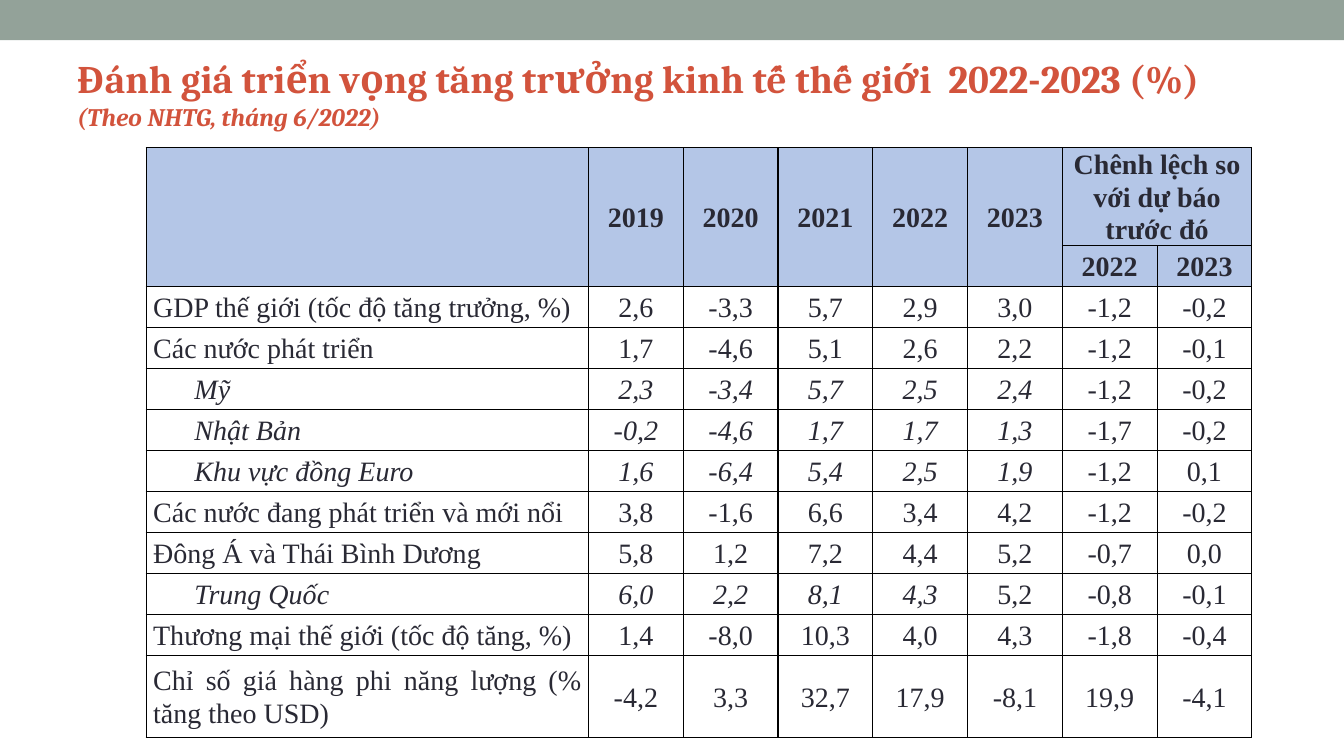
import dataclasses

import lxml.etree
import pptx
import pptx.dml.color
import pptx.enum.shapes
import pptx.enum.text
import pptx.oxml.ns
import pptx.util

Pt = pptx.util.Pt
qn = pptx.oxml.ns.qn
Align = pptx.enum.text.PP_ALIGN
Middle = pptx.enum.text.MSO_ANCHOR.MIDDLE


def color(value):
    return pptx.dml.color.RGBColor.from_string(value)


@dataclasses.dataclass(frozen=True)
class Theme:
    bar: str = "93A299"
    title: str = "D2533C"
    text: str = "292934"
    header: str = "B4C6E7"
    border: str = "000000"
    title_font: str = "Cambria"
    table_font: str = "Times New Roman"
    title_size: float = 27.9
    subtitle_size: float = 18
    table_size: float = 20
    border_width: float = 1
    indent: float = 29.5


THEME = Theme()
TITLE = "Đánh giá triển vọng tăng trưởng kinh tế thế giới  2022-2023 (%)"
SUBTITLE = "(Theo NHTG, tháng 6/2022)"
YEARS = ["2019", "2020", "2021", "2022", "2023"]
REVISION = "Chênh lệch so với dự báo trước đó"
REVISION_YEARS = ["2022", "2023"]
FORECASTS = [
    ("GDP thế giới (tốc độ tăng trưởng, %)", "2,6 -3,3 5,7 2,9 3,0 -1,2 -0,2", 0),
    ("Các nước phát triển", "1,7 -4,6 5,1 2,6 2,2 -1,2 -0,1", 0),
    ("Mỹ", "2,3 -3,4 5,7 2,5 2,4 -1,2 -0,2", 6),
    ("Nhật Bản", "-0,2 -4,6 1,7 1,7 1,3 -1,7 -0,2", 6),
    ("Khu vực đồng Euro", "1,6 -6,4 5,4 2,5 1,9 -1,2 0,1", 6),
    ("Các nước đang phát triển và mới nổi", "3,8 -1,6 6,6 3,4 4,2 -1,2 -0,2", 0),
    ("Đông Á và Thái Bình Dương", "5,8 1,2 7,2 4,4 5,2 -0,7 0,0", 0),
    ("Trung Quốc", "6,0 2,2 8,1 4,3 5,2 -0,8 -0,1", 5),
    ("Thương mại thế giới (tốc độ tăng, %)", "1,4 -8,0 10,3 4,0 4,3 -1,8 -0,4", 0),
    ("Chỉ số giá hàng phi năng lượng (% tăng theo USD)",
     "-4,2 3,3 32,7 17,9 -8,1 19,9 -4,1", 0),
]


def add_top_bar(slide, left, top, width, height):
    bar = slide.shapes.add_shape(
        pptx.enum.shapes.MSO_SHAPE.RECTANGLE, Pt(left), Pt(top), Pt(width), Pt(height))
    bar.shadow.inherit = False
    bar.fill.solid()
    bar.fill.fore_color.rgb = color(THEME.bar)
    bar.line.fill.background()


def add_title(slide, left, top, width, height):
    title = slide.shapes.title
    title.left, title.top, title.width, title.height = map(Pt, (left, top, width, height))
    frame = title.text_frame
    frame.text = f"{TITLE}\v{SUBTITLE}"
    frame.word_wrap = True
    frame.auto_size = pptx.enum.text.MSO_AUTO_SIZE.NONE
    frame.vertical_anchor = Middle
    paragraph = frame.paragraphs[0]
    paragraph.alignment = Align.LEFT
    heading, source = paragraph.runs
    for run, size in ((heading, THEME.title_size), (source, THEME.subtitle_size)):
        run.font.name = THEME.title_font
        run.font.size = Pt(size)
        run.font.bold = True
        run.font.color.rgb = color(THEME.title)
    source.font.italic = True


def set_borders(cell):
    properties = cell._tc.get_or_add_tcPr()
    for position, side in enumerate(("a:lnL", "a:lnR", "a:lnT", "a:lnB")):
        line = lxml.etree.Element(qn(side), w=str(Pt(THEME.border_width)))
        fill = lxml.etree.SubElement(line, qn("a:solidFill"))
        lxml.etree.SubElement(fill, qn("a:srgbClr"), val=THEME.border)
        properties.insert(position, line)


def format_cell(cell, is_header):
    cell.margin_left = cell.margin_right = Pt(5)
    cell.margin_top = cell.margin_bottom = Pt(0)
    cell.vertical_anchor = Middle
    if is_header:
        cell.fill.solid()
        cell.fill.fore_color.rgb = color(THEME.header)
    else:
        cell.fill.background()
    set_borders(cell)


def write_cell(cell, text, alignment=Align.CENTER, bold=False, italic=False):
    cell.text_frame.text = text
    paragraph = cell.text_frame.paragraphs[0]
    paragraph.alignment = alignment
    paragraph.line_spacing = 1.05
    font = paragraph.runs[0].font
    font.name = THEME.table_font
    font.size = Pt(THEME.table_size)
    font.bold = bold
    font.italic = italic
    font.color.rgb = color(THEME.text)
    return paragraph


def write_header(table):
    for column in range(len(YEARS) + 1):
        table.cell(0, column).merge(table.cell(1, column))
    first_revision = len(YEARS) + 1
    table.cell(0, first_revision).merge(table.cell(0, first_revision + 1))
    for column, year in enumerate(YEARS, 1):
        write_cell(table.cell(0, column), year, bold=True)
    write_cell(table.cell(0, first_revision), REVISION, bold=True)
    for column, year in enumerate(REVISION_YEARS, first_revision):
        write_cell(table.cell(1, column), year, bold=True)


def add_forecast_table(slide, left, top, width, height):
    row_count = len(FORECASTS) + 2
    column_count = len(YEARS) + len(REVISION_YEARS) + 1
    table = slide.shapes.add_table(
        row_count, column_count, Pt(left), Pt(top), Pt(width), Pt(height)).table
    table.first_row = table.horz_banding = False

    label_width, header_height = 0.4 * width, 70
    row_height = (height - header_height) / row_count
    for index, column in enumerate(table.columns):
        column.width = Pt(label_width if index == 0
                          else (width - label_width) / (column_count - 1))
    for row in table.rows:
        row.height = Pt(row_height)
    table.rows[0].height = Pt(header_height)
    table.rows[row_count - 1].height = Pt(2 * row_height)

    for row in range(row_count):
        for column in range(column_count):
            format_cell(table.cell(row, column), row < 2)
    write_header(table)
    for row, (label, values, italic_cells) in enumerate(FORECASTS, 2):
        paragraph = write_cell(
            table.cell(row, 0), label, Align.JUSTIFY, italic=italic_cells > 0)
        if italic_cells:
            paragraph._p.get_or_add_pPr().set("indent", str(Pt(THEME.indent)))
        for column, value in enumerate(values.split(), 1):
            write_cell(table.cell(row, column), value, italic=column < italic_cells)


def main():
    presentation = pptx.Presentation()
    presentation.slide_width, presentation.slide_height = Pt(960), Pt(540)
    slide = presentation.slides.add_slide(presentation.slide_layouts[5])
    add_top_bar(slide, 0, 0, 960, 28.8)
    add_title(slide, 48, 27.4, 864, 78)
    add_forecast_table(slide, 104.4, 105.6, 790, 421.5)
    presentation.save("out.pptx")


if __name__ == "__main__":
    main()
